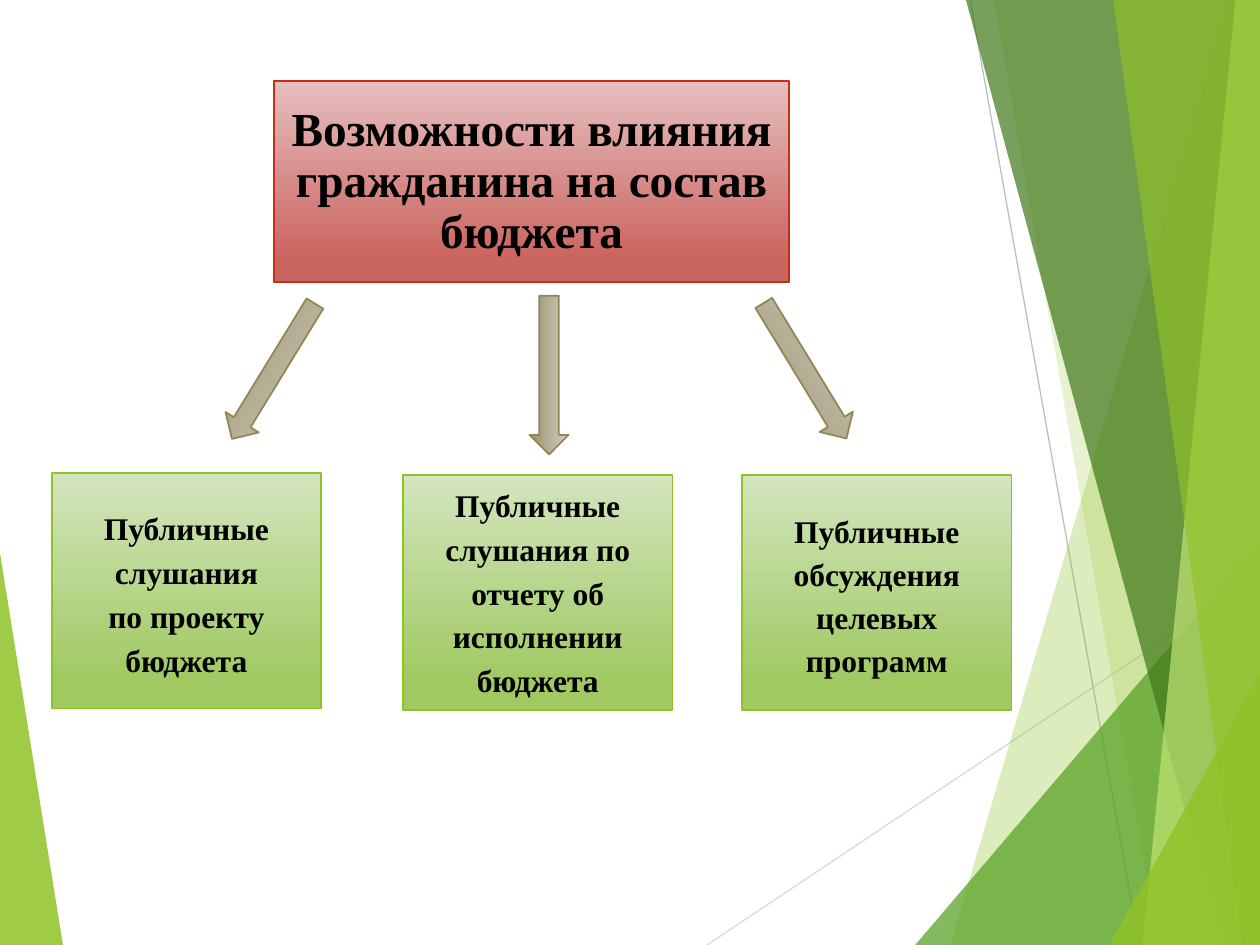
from dataclasses import dataclass
from typing import NamedTuple, Optional

from lxml import etree
from pptx import Presentation
from pptx.dml.color import RGBColor
from pptx.enum import shapes, text
from pptx.oxml.ns import qn
from pptx.util import Pt


class Gradient(NamedTuple):
    start: str
    end: str
    line: str


@dataclass(frozen=True)
class Theme:
    font: str = "Times New Roman"
    ink: str = "000000"
    title_size: float = 27
    body_size: float = 18
    red: Gradient = Gradient("E6BFBE", "CB6560", "C42F1A")
    green: Gradient = Gradient("D3E5BE", "A0C962", "90C226")
    khaki: Gradient = Gradient("D1CDC0", "A19877", "918655")
    leaf: str = "90C226"
    grass: str = "54A021"
    forest: str = "3F7819"
    lime: str = "C0E474"


class Facet(NamedTuple):
    color: str
    opacity: int
    points: list


class Ray(NamedTuple):
    color: str
    start: tuple
    end: tuple


class Line(NamedTuple):
    words: str
    spacing: Optional[float]


class Option(NamedTuple):
    left: float
    top: float
    lines: list


class Arrow(NamedTuple):
    left: float
    top: float
    angle: float


THEME = Theme()
WIDTH, HEIGHT = 720, 540
OPTION_SIZE = (154, 134.5)
ARROW_SIZE = (90.7, 22.3)

LEFT_FACET = Facet(THEME.leaf, 85, [(0, 316), (35.5, HEIGHT), (0, HEIGHT)])
RAYS = [
    Ray("D9D9D9", (404, HEIGHT), (WIDTH, 329)),
    Ray("BFBFBF", (554.4, 0), (651, HEIGHT)),
]


def band(color: str, opacity: int, top: float, bottom: float) -> Facet:
    """A facet from a slanted left edge to the right side of the slide."""
    return Facet(color, opacity, [(top, 0), (bottom, HEIGHT), (WIDTH, HEIGHT), (WIDTH, 0)])


def corner(color: str, opacity: int, left: float, top: float) -> Facet:
    """A triangle in the bottom right corner."""
    return Facet(color, opacity, [(left, HEIGHT), (WIDTH, top), (WIDTH, HEIGHT)])


RIGHT_FACETS = [
    band(THEME.leaf, 30, 702, 543),
    band(THEME.leaf, 20, 567.5, 661.7),
    corner(THEME.grass, 72, 522.7, 309),
    band(THEME.forest, 70, 552, 698.4),
    band(THEME.lime, 70, 706.3, 653),
    band(THEME.leaf, 65, 636, 710),
    corner(THEME.leaf, 80, 634.5, 385.2),
]

TITLE = [Line("Возможности влияния гражданина на состав бюджета", 29)]
OPTIONS = [
    Option(29.5, 270.4, [Line("Публичные слушания", 25), Line("по проекту бюджета", 25)]),
    Option(230.3, 271.4, [Line("Публичные", None),
                          Line("слушания по отчету об исполнении бюджета", 25)]),
    Option(424, 271.4, [Line("Публичные обсуждения целевых программ", 24.7)]),
]
ARROWS = [Arrow(110.9, 201, 121.5), Arrow(268.4, 203.2, 90), Arrow(414.7, 200.7, 58.6)]


def paint(shape, gradient: Gradient) -> None:
    shape.fill.gradient()
    shape.fill.gradient_angle = 270
    stops = shape.fill.gradient_stops
    for stop, color, position in zip(stops, gradient[:2], (0, 0.88)):
        stop.color.rgb = RGBColor.from_string(color)
        stop.position = position
    shape.line.color.rgb = RGBColor.from_string(gradient.line)
    shape.line.width = Pt(1)
    shape.shadow.inherit = False


def write(shape, lines: list, size: float) -> None:
    box = shape.text_frame
    box.word_wrap = True
    box.auto_size = text.MSO_AUTO_SIZE.NONE
    box.vertical_anchor = text.MSO_ANCHOR.MIDDLE
    box.margin_left = box.margin_right = box.margin_top = box.margin_bottom = Pt(0)
    for index, line in enumerate(lines):
        para = box.add_paragraph() if index else box.paragraphs[0]
        para.alignment = text.PP_ALIGN.CENTER
        if line.spacing:
            para.line_spacing = Pt(line.spacing)
        span = para.add_run()
        span.text = line.words
        span.font.name = THEME.font
        span.font.size = Pt(size)
        span.font.bold = True
        span.font.color.rgb = RGBColor.from_string(THEME.ink)


def draw_facet(page, facet: Facet) -> None:
    builder = page.shapes.build_freeform(*facet.points[0], scale=Pt(1))
    builder.add_line_segments(facet.points[1:], close=True)
    shape = builder.convert_to_shape()
    shape.fill.solid()
    shape.fill.fore_color.rgb = RGBColor.from_string(facet.color)
    color = shape.fill._xPr.find(qn("a:solidFill"))[0]
    etree.SubElement(color, qn("a:alpha"), val=str(facet.opacity * 1000))
    shape.line.fill.background()
    shape.shadow.inherit = False


def draw_ray(page, ray: Ray) -> None:
    ends = [Pt(value) for value in ray.start + ray.end]
    line = page.shapes.add_connector(shapes.MSO_CONNECTOR.STRAIGHT, *ends)
    line.line.color.rgb = RGBColor.from_string(ray.color)
    line.line.width = Pt(0.75)
    etree.SubElement(line._element.spPr, qn("a:effectLst"))


def draw_title(page) -> None:
    title = page.shapes.title
    title.left, title.top, title.width, title.height = Pt(156.5), Pt(46.2), Pt(294.5), Pt(115)
    paint(title, THEME.red)
    write(title, TITLE, THEME.title_size)


def draw_option(page, option: Option) -> None:
    place = [Pt(value) for value in (option.left, option.top, *OPTION_SIZE)]
    shape = page.shapes.add_shape(shapes.MSO_SHAPE.RECTANGLE, *place)
    paint(shape, THEME.green)
    write(shape, option.lines, THEME.body_size)


def draw_arrow(page, arrow: Arrow) -> None:
    place = [Pt(value) for value in (arrow.left, arrow.top, *ARROW_SIZE)]
    shape = page.shapes.add_shape(shapes.MSO_SHAPE.RIGHT_ARROW, *place)
    shape.rotation = arrow.angle
    paint(shape, THEME.khaki)


def main() -> None:
    deck = Presentation()
    deck.slide_width, deck.slide_height = Pt(WIDTH), Pt(HEIGHT)
    page = deck.slides.add_slide(deck.slide_layouts[5])

    # Faceted backdrop
    draw_facet(page, LEFT_FACET)
    for ray in RAYS:
        draw_ray(page, ray)
    for facet in RIGHT_FACETS:
        draw_facet(page, facet)

    # Title, the options below it and the arrows between
    draw_title(page)
    for option in OPTIONS:
        draw_option(page, option)
    for arrow in ARROWS:
        draw_arrow(page, arrow)

    deck.save("out.pptx")


if __name__ == "__main__":
    main()
